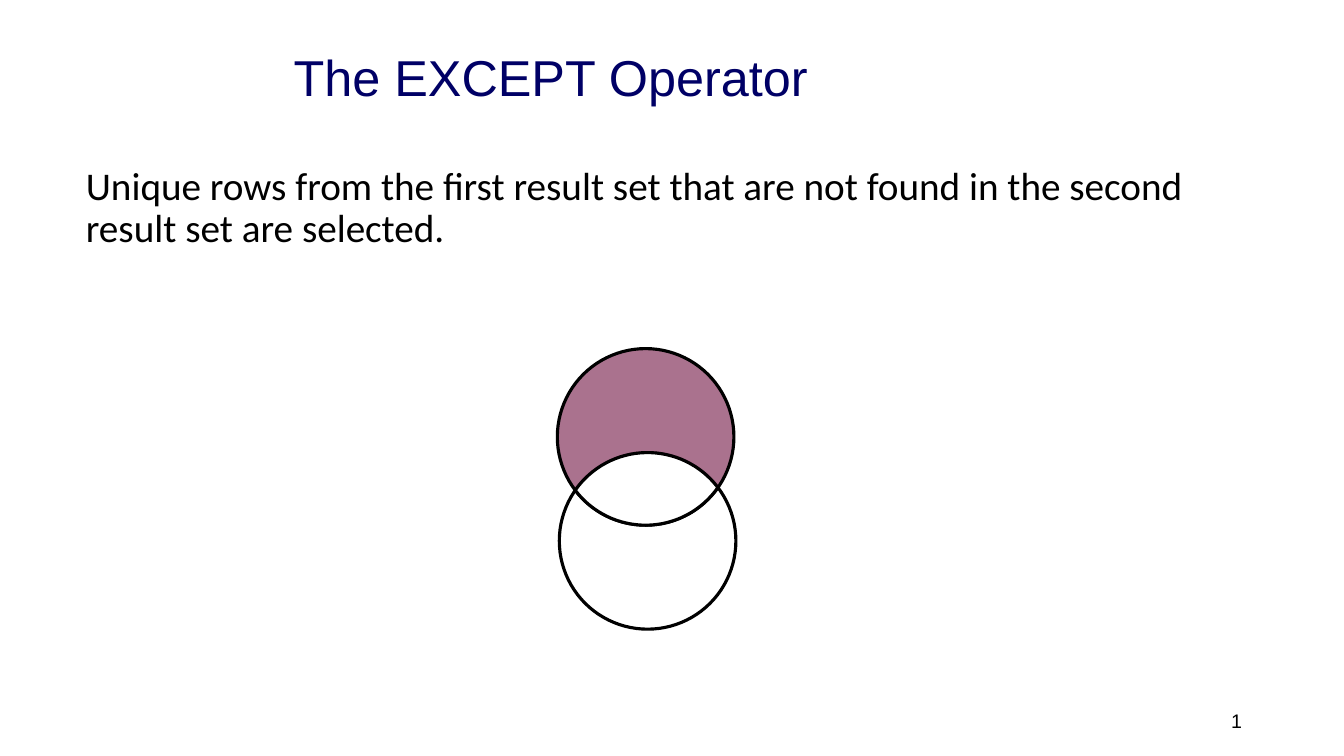
from dataclasses import dataclass, field
from math import acos, atan2, cos, dist, pi, sin
from typing import Any, Optional

from lxml.etree import SubElement as Sub
from pptx import Presentation
from pptx.dml.color import RGBColor as Rgb
from pptx.enum.shapes import MSO_SHAPE as Kind
from pptx.enum.text import MSO_ANCHOR as Anchor, MSO_AUTO_SIZE as Fit, PP_ALIGN as Align
from pptx.oxml.ns import qn
from pptx.util import Cm, Pt

HUES = {"navy": "000066", "black": "000000", "white": "FFFFFF", "plum": "954F72"}
SIZE, RAD, STEPS = 4.45, 2.225, 32
TOP, LOW = (16.27, 11.01), (16.32, 13.63)


@dataclass
class Note:
    """A block of text with its place and formats."""
    words: str
    at: tuple[float, float, float, float]
    hue: str
    font: dict[str, Any]
    para: dict[str, Any]
    frame: dict[str, Any] = field(default_factory=dict)
    left: float = 0


@dataclass
class Disc:
    """A circle of the diagram."""
    mid: tuple[float, float]
    fill: Optional[str] = None
    line: Optional[str] = None
    alpha: int = 100


TITLE = Note("The EXCEPT Operator", (6.76, 1.83, 22.89, 1.8), "navy",
             {"name": "Arial", "size": Pt(36)},
             {"alignment": Align.LEFT, "line_spacing": Pt(24)},
             {"vertical_anchor": Anchor.TOP, "margin_left": 0, "margin_top": 0,
              "margin_right": 0, "margin_bottom": 0}, 0.64)
BODY = Note("Unique rows from the first result set that are not found in the "
            "second result set are selected.", (1.91, 4.06, 29.21, 2.59), "black",
            {"name": "Calibri", "size": Pt(28)},
            {"alignment": Align.LEFT, "line_spacing": 0.9, "space_before": Pt(7.5)},
            {"vertical_anchor": Anchor.TOP})
PAGE = Note("1", (23.93, 17.65, 7.62, 1.02), "black",
            {"name": "Arial", "size": Pt(14)}, {"alignment": Align.RIGHT},
            {"vertical_anchor": Anchor.MIDDLE})
DISCS = [Disc(LOW, "white", "black"), Disc(TOP, "plum", alpha=80),
         Disc(TOP, line="black")]


def apply(item: Any, fmt: dict[str, Any]) -> None:
    """Set each attribute named in a dict of formats."""
    for name, value in fmt.items():
        setattr(item, name, value)


def write(box: Any, note: Note) -> Any:
    """Place a text shape, fill it and return its run."""
    apply(box, dict(zip(("left", "top", "width", "height"), map(Cm, note.at))))
    frame = box.text_frame
    apply(frame, {"word_wrap": True, "auto_size": Fit.NONE, **note.frame})
    para = frame.paragraphs[0]
    apply(para, note.para)
    props = para._p.get_or_add_pPr()
    props.set("marL", str(Cm(note.left)))
    props.set("indent", "0")
    Sub(props, qn("a:buNone"))
    run = para.add_run()
    run.text = note.words
    apply(run.font, note.font)
    run.font.color.rgb = Rgb.from_string(HUES[note.hue])
    return run


def paint(shape: Any, fill: Optional[str], line: Optional[str], alpha: int = 100) -> None:
    """Give a shape its fill and outline."""
    shape.shadow.inherit = False
    if fill:
        shape.fill.solid()
        shape.fill.fore_color.rgb = Rgb.from_string(HUES[fill])
        if alpha < 100:
            tint = shape._element.spPr.find(".//" + qn("a:srgbClr"))
            Sub(tint, qn("a:alpha"), val=str(alpha * 1000))
    else:
        shape.fill.background()
    if line:
        shape.line.color.rgb = Rgb.from_string(HUES[line])
        shape.line.width = Pt(2.25)
    else:
        shape.line.fill.background()


def draw(group: Any, disc: Disc) -> None:
    """Add one circle around its centre."""
    x, y = (Cm(c - RAD) for c in disc.mid)
    shape = group.shapes.add_shape(Kind.OVAL, x, y, Cm(SIZE), Cm(SIZE))
    shape.rotation = 90
    paint(shape, disc.fill, disc.line, disc.alpha)


def arc(mid: tuple[float, float], turn: float, half: float) -> list[tuple[int, int]]:
    """Return points along an arc centred on a given direction."""
    turns = [turn + half * (2 * i / STEPS - 1) for i in range(STEPS + 1)]
    return [(Cm(mid[0] + RAD * cos(t)), Cm(mid[1] + RAD * sin(t))) for t in turns]


def lens(group: Any) -> None:
    """Add the overlap of the two circles."""
    half = acos(dist(TOP, LOW) / SIZE)
    down = atan2(LOW[1] - TOP[1], LOW[0] - TOP[0])
    pts = arc(LOW, down + pi, half) + arc(TOP, down, half)
    path = group.shapes.build_freeform(*pts[0])
    path.add_line_segments(pts[1:], close=True)
    paint(path.convert_to_shape(), "white", "black")


def main() -> None:
    """Build the slide and save it."""
    deck = Presentation()
    apply(deck, {"slide_width": Cm(33.87), "slide_height": Cm(19.05)})
    slide = deck.slides.add_slide(deck.slide_layouts[1])
    write(slide.shapes.title, TITLE)
    write(slide.placeholders[1], BODY)
    run = write(slide.shapes.add_textbox(*map(Cm, PAGE.at)), PAGE)
    run._r.tag = qn("a:fld")
    run._r.set("id", "{B6F15528-21DE-4FAA-801E-634DDDAF4B2B}")
    run._r.set("type", "slidenum")
    group = slide.shapes.add_group_shape()
    for disc in DISCS:
        draw(group, disc)
    lens(group)
    deck.save("out.pptx")


if __name__ == "__main__":
    main()
